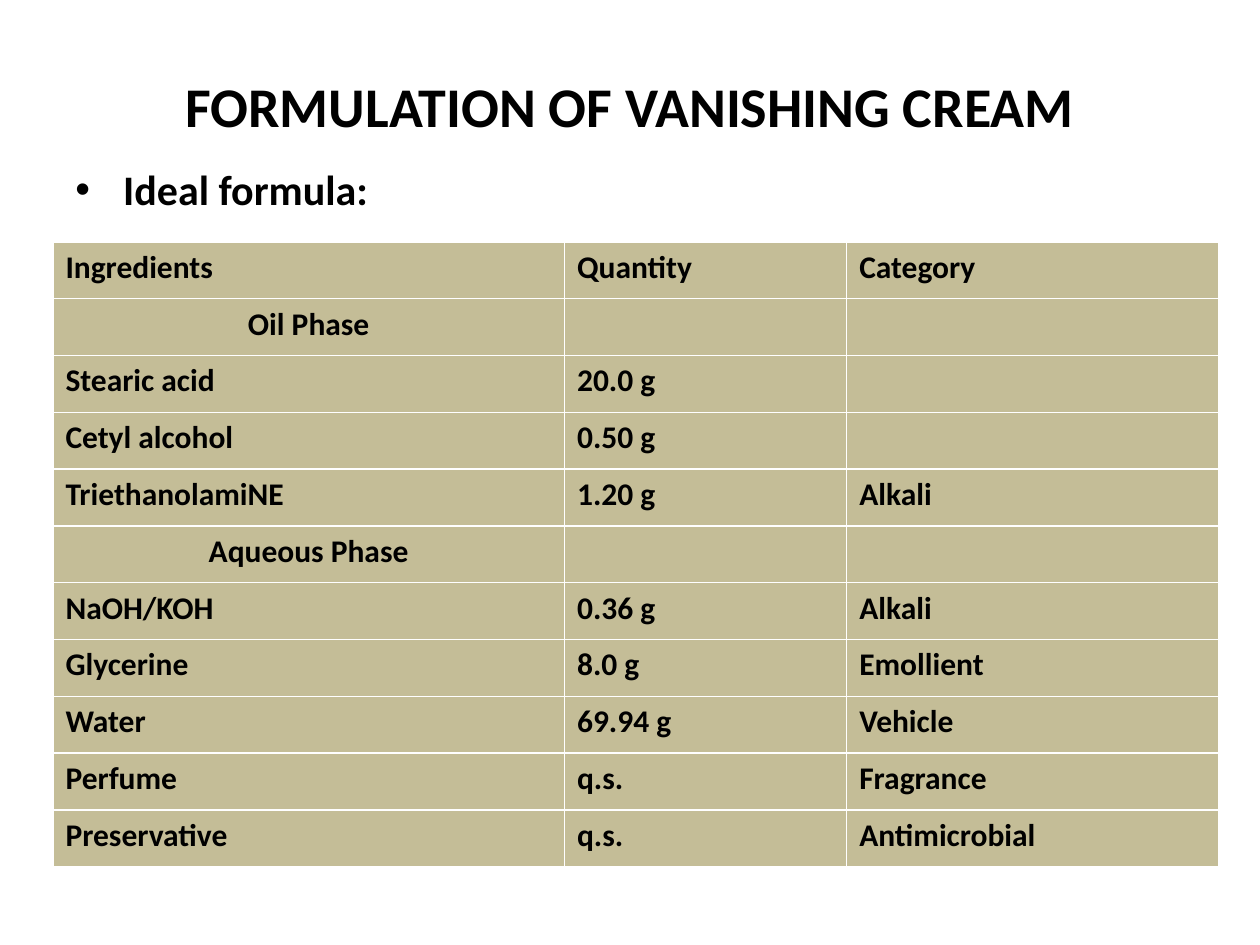
from lxml.etree import SubElement
from pptx import Presentation
from pptx.dml.color import RGBColor
from pptx.enum.text import MSO_ANCHOR as Anchor, PP_ALIGN as Align
from pptx.oxml.ns import qn
from pptx.util import Inches, Pt

COLORS = {"text": "000000", "cell": "C4BD97"}
FONT = "Calibri"
COLUMN_WIDTHS = (4.06, 2.24, 2.95)
ROWS = (
    ("Ingredients", "Quantity", "Category"),
    ("Oil Phase",),
    ("Stearic acid", "20.0 g"),
    ("Cetyl alcohol", "0.50 g"),
    ("TriethanolamiNE", "1.20 g", "Alkali"),
    ("Aqueous Phase",),
    ("NaOH/KOH", "0.36 g", "Alkali"),
    ("Glycerine", "8.0 g", "Emollient"),
    ("Water", "69.94 g", "Vehicle"),
    ("Perfume", "q.s.", "Fragrance"),
    ("Preservative", "q.s.", "Antimicrobial"),
)


def add_span(para, text, size):
    """Add one bold run to a paragraph."""
    span = para.add_run()
    span.text = text
    font = span.font
    font.name, font.size, font.bold = FONT, Pt(size), True
    font.color.rgb = RGBColor.from_string(COLORS["text"])


def add_text(page, left, top, width, height, anchor):
    """Add a wrapping text box and return its first paragraph."""
    box = page.shapes.add_textbox(Inches(left), Inches(top), Inches(width), Inches(height))
    box.text_frame.word_wrap = True
    box.text_frame.vertical_anchor = anchor
    return box.text_frame.paragraphs[0]


def add_title(page, left, top, width, height):
    """Place the centred slide title."""
    para = add_text(page, left, top, width, height, Anchor.MIDDLE)
    para.alignment = Align.CENTER
    add_span(para, "FORMULATION OF VANISHING CREAM", 32)


def add_lead(page, left, top, width, height):
    """Place the bulleted line that introduces the table."""
    para = add_text(page, left, top, width, height, Anchor.TOP)
    properties = para._p.get_or_add_pPr()
    indent = Inches(0.38)
    properties.set("marL", str(indent))
    properties.set("indent", str(-indent))
    SubElement(properties, qn("a:buFont"), typeface="Arial")
    SubElement(properties, qn("a:buChar"), char="•")
    add_span(para, "Ideal formula:", 24)


def add_formula(page, left, top, width, height):
    """Place the ingredient table, with phase names centred."""
    table = page.shapes.add_table(
        len(ROWS), len(COLUMN_WIDTHS), Inches(left), Inches(top), Inches(width), Inches(height)
    ).table
    for column, share in zip(table.columns, COLUMN_WIDTHS):
        column.width = Inches(width * share / sum(COLUMN_WIDTHS))
    for row, texts in zip(table.rows, ROWS):
        for cell in row.cells:
            cell.fill.solid()
            cell.fill.fore_color.rgb = RGBColor.from_string(COLORS["cell"])
        for cell, text in zip(row.cells, texts):
            para = cell.text_frame.paragraphs[0]
            if len(texts) == 1:
                para.alignment = Align.CENTER
            add_span(para, text, 18)


def main():
    """Build and save the slide."""
    deck = Presentation()
    deck.slide_width, deck.slide_height = Inches(10), Inches(7.5)
    page = deck.slides.add_slide(deck.slide_layouts[6])
    add_title(page, 0.5, 0.5, 9, 0.67)
    add_lead(page, 0.5, 1.25, 9, 4.95)
    add_formula(page, 0.42, 1.92, 9.25, 4.96)
    deck.save("out.pptx")


if __name__ == "__main__":
    main()
